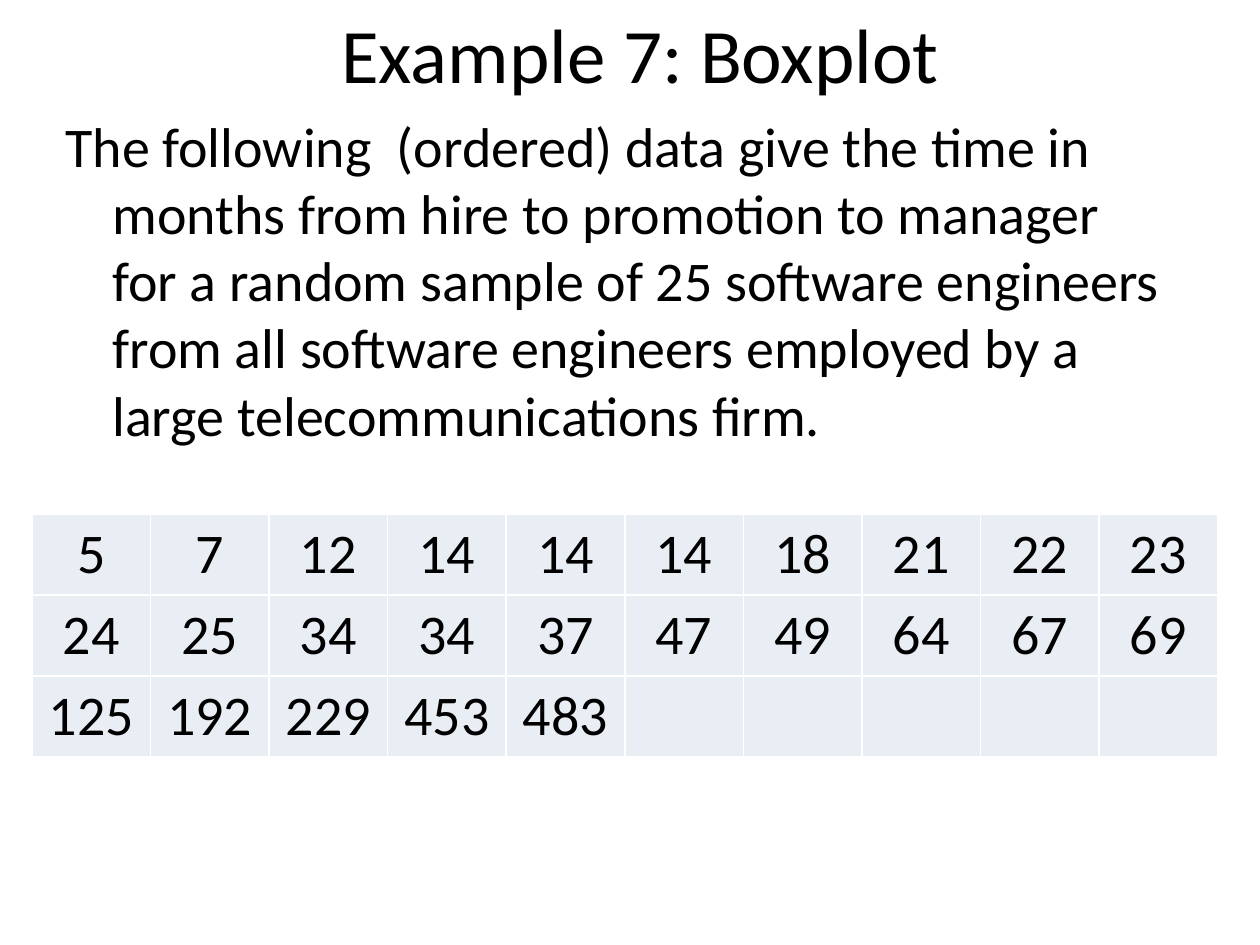
import pptx
import pptx.dml.color
import pptx.enum.text
import pptx.oxml
import pptx.oxml.ns
import pptx.util

ANCHOR = pptx.enum.text.MSO_ANCHOR
ALIGN = pptx.enum.text.PP_ALIGN
INK, CELL_FILL, GRID = "000000", "E9EDF4", "FFFFFF"
INTRO = (
    "The following  (ordered) data give the time in months from hire to promotion "
    "to manager for a random sample of 25 software engineers from all software "
    "engineers employed by a large telecommunications firm."
)
MONTHS = [5, 7, 12, 14, 14, 14, 18, 21, 22, 23,
          24, 25, 34, 34, 37, 47, 49, 64, 67, 69,
          125, 192, 229, 453, 483]
COLUMNS, ROWS = 10, 3


def px(length):
    return pptx.util.Emu(round(length * 914400 / 126))


def color(code):
    return pptx.dml.color.RGBColor.from_string(code)


def apply(target, values):
    for name, value in values.items():
        setattr(target, name, value)


def write(para, text, size, values):
    apply(para, values)
    apply(para.font, {"size": pptx.util.Pt(size), "name": "Calibri"})
    if text:
        span = para.add_run()
        span.text = text
        apply(span.font, {"size": pptx.util.Pt(size), "name": "Calibri"})
        span.font.color.rgb = color(INK)


def add_text(page, box, text, size, anchor, values):
    frame = page.shapes.add_textbox(*map(px, box)).text_frame
    apply(frame, {"word_wrap": True, "vertical_anchor": anchor})
    para = frame.paragraphs[0]
    write(para, text, size, values)
    return para


def add_title(page, box):
    add_text(page, box, "Example 7: Boxplot", 44, ANCHOR.MIDDLE, {"alignment": ALIGN.CENTER})


def add_intro(page, box):
    para = add_text(page, box, INTRO, 32, ANCHOR.TOP, {"space_before": pptx.util.Pt(6.4)})
    properties = para._p.get_or_add_pPr()
    properties.set("marL", str(px(47)))
    properties.set("indent", str(-px(47)))


def add_borders(cell):
    properties = cell._tc.get_or_add_tcPr()
    namespace = pptx.oxml.ns.nsdecls("a")
    for position, side in enumerate(("lnL", "lnR", "lnT", "lnB")):
        properties.insert(position, pptx.oxml.parse_xml(
            f'<a:{side} {namespace} w="12700"><a:solidFill>'
            f'<a:srgbClr val="{GRID}"/></a:solidFill></a:{side}>'
        ))


def add_months(page, box):
    table = page.shapes.add_table(ROWS, COLUMNS, *map(px, box)).table
    apply(table, {"first_row": False, "horz_banding": False})
    for column in table.columns:
        column.width = px(box[2] / COLUMNS)
    for row in table.rows:
        row.height = px(box[3] / ROWS)
    for index, cell in enumerate(table.iter_cells()):
        text = str(MONTHS[index]) if index < len(MONTHS) else ""
        cell.vertical_anchor = ANCHOR.MIDDLE
        cell.fill.solid()
        cell.fill.fore_color.rgb = color(CELL_FILL)
        write(cell.text_frame.paragraphs[0], text, 32, {"alignment": ALIGN.CENTER})
        add_borders(cell)


def main():
    deck = pptx.Presentation()
    apply(deck, {"slide_width": px(1260), "slide_height": px(945)})
    page = deck.slides.add_slide(deck.slide_layouts[6])
    add_title(page, (63, 0, 1155, 105))
    add_intro(page, (53, 105, 1134, 624))
    add_months(page, (32, 514, 1186, 243))
    deck.save("out.pptx")


if __name__ == "__main__":
    main()
